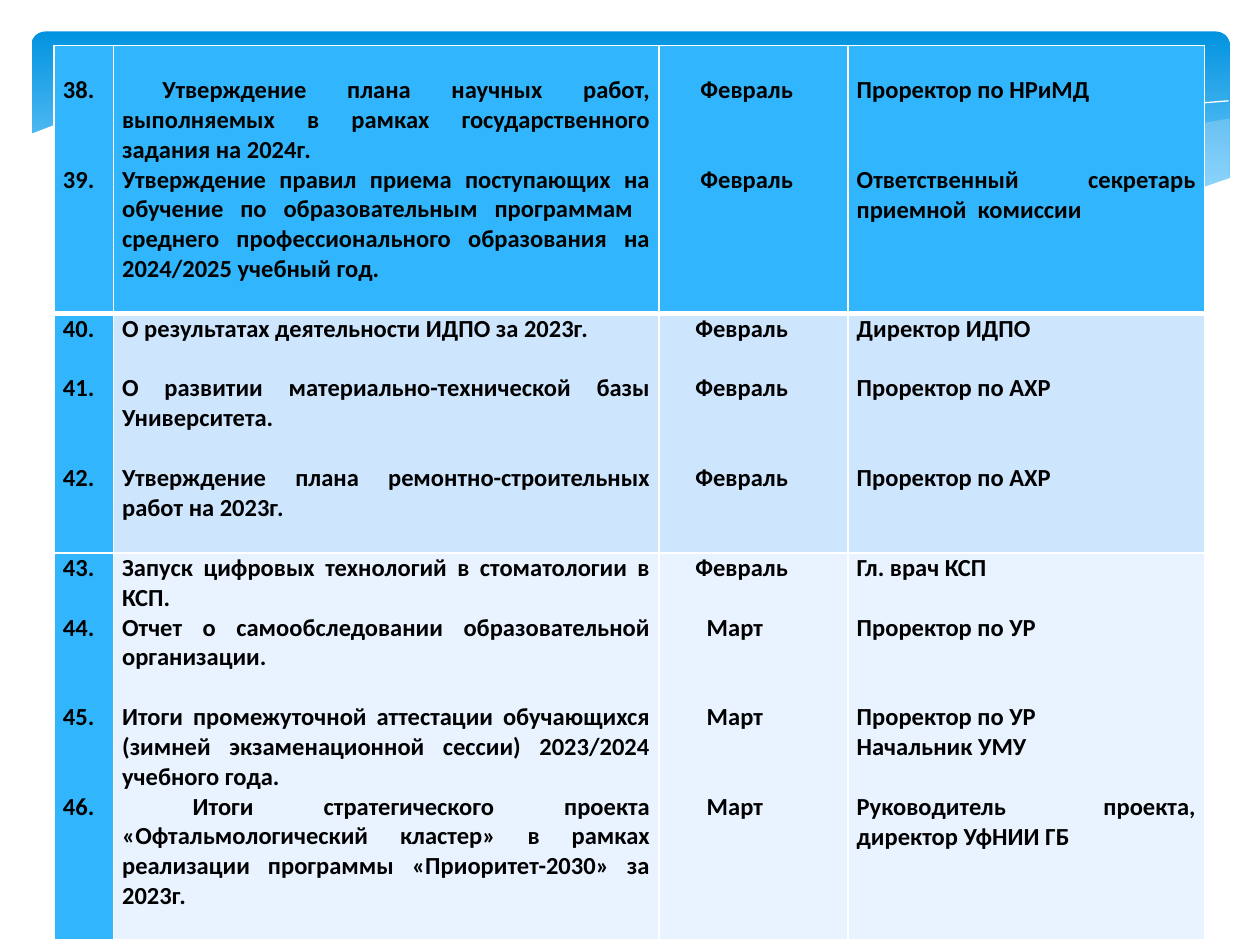
import pptx
import pptx.dml.color
import pptx.enum.shapes
import pptx.enum.text
import pptx.oxml
import pptx.oxml.ns
import pptx.util

THEME = {
    "white": "FFFFFF", "black": "000000",
    "band_top": "0293E0", "band_bottom": "83D3FE", "wave": "C6E7FC",
    "strong": "31B6FD", "tint": "CEE5FE", "pale": "E8F3FF",
    "font": "Calibri", "size": 14, "line": 17.1,
}
JUSTIFY = pptx.enum.text.PP_ALIGN.JUSTIFY
LEFT = pptx.enum.text.PP_ALIGN.LEFT
COLOR = pptx.dml.color.RGBColor.from_string
Inches = pptx.util.Inches
Pt = pptx.util.Pt


def add_wave(page, points, fill=None, opacity=100, closed=True):
    """Draw an outline whose points are hundredths of an inch."""
    builder = page.shapes.build_freeform(*points[0], scale=Inches(0.01))
    builder.add_line_segments(points[1:], close=closed)
    wave = builder.convert_to_shape()
    wave.shadow.inherit = False
    if fill is None:
        wave.fill.background()
        wave.line.color.rgb = COLOR(THEME["white"])
        wave.line.width = Pt(0)
        return
    wave.line.fill.background()
    wave.fill.solid()
    wave.fill.fore_color.rgb = COLOR(fill)
    if opacity < 100:
        color = wave.fill._xPr.find(".//" + pptx.oxml.ns.qn("a:srgbClr"))
        color.append(pptx.oxml.parse_xml(
            f'<a:alpha {pptx.oxml.ns.nsdecls("a")} val="{opacity * 1000}"/>'))


def write_cell(cell, entries, fill, align, borders):
    """Fill a cell; an entry is (blank lines before, text, first-line indent)."""
    frame = cell.text_frame
    for number, (gap, text, indent) in enumerate(entries):
        para = frame.paragraphs[0] if number == 0 else frame.add_paragraph()
        para.alignment = align
        if gap:
            para.space_before = Pt(gap * THEME["line"])
        if indent:
            properties = para._p.get_or_add_pPr()
            properties.set("marL", "0")
            properties.set("indent", str(Inches(indent)))
        span = para.add_run()
        span.text = text
        font_format = {"name": THEME["font"], "size": Pt(THEME["size"]), "bold": True}
        for name, value in font_format.items():
            setattr(span.font, name, value)
        span.font.color.rgb = COLOR(THEME["black"])
    # Borders come before the fill in the cell's properties
    for side, width in borders.items():
        cell._tc.get_or_add_tcPr().append(pptx.oxml.parse_xml(
            f'<a:{side} {pptx.oxml.ns.nsdecls("a")} w="{Pt(width)}"><a:solidFill>'
            f'<a:srgbClr val="{THEME["white"]}"/></a:solidFill></a:{side}>'))
    cell.fill.solid()
    cell.fill.fore_color.rgb = COLOR(fill)


deck = pptx.Presentation()
deck.slide_width, deck.slide_height = Inches(10), Inches(7.5)
page = deck.slides.add_slide(deck.slide_layouts[6])

# Gradient band at the top
band = page.shapes.add_shape(pptx.enum.shapes.MSO_SHAPE.ROUNDED_RECTANGLE,
                             Inches(0.25), Inches(0.25), Inches(9.51), Inches(1.56))
band.adjustments[0] = 0.07
band.shadow.inherit = False
band.line.fill.background()
band.fill.gradient()
band.fill.gradient_angle = 270
for stop, name, position in zip(band.fill.gradient_stops, ("band_top", "band_bottom"), (0, 0.9)):
    stop.color.rgb = COLOR(THEME[name])
    stop.position = position

# Waves across the band
add_wave(page, [(976, 94), (935, 101), (891, 110), (832, 125), (779, 137), (729, 147),
                (661, 160), (705, 165), (757, 170), (803, 172), (844, 171), (889, 166),
                (928, 158), (963, 147), (976, 141)], THEME["wave"], 29)
add_wave(page, [(893, 167), (837, 159), (775, 149), (706, 134), (629, 116), (569, 102),
                (514, 92), (465, 86), (399, 80), (344, 80), (286, 86), (342, 94),
                (404, 106), (491, 126), (566, 143), (634, 156), (695, 165), (748, 170),
                (807, 173), (857, 171)], THEME["wave"], 40)
add_wave(page, [(309, 90), (344, 84), (401, 82), (450, 82), (510, 86), (582, 94),
                (665, 108), (760, 128), (831, 145), (907, 166)], closed=False)
add_wave(page, [(613, 151), (672, 135), (748, 117), (806, 104), (866, 93), (910, 86),
                (951, 82), (975, 80)], closed=False)
add_wave(page, [(977, 141), (940, 154), (899, 164), (850, 170), (793, 171), (726, 167),
                (648, 156), (555, 139), (447, 114), (365, 96), (292, 85), (230, 79),
                (177, 78), (132, 81), (85, 87), (52, 96), (36, 102), (23, 107),
                (23, 224), (977, 224)], THEME["white"])

# Plan of questions: number, question, month, person in charge
rows = [
    [[(0, "38.", 0), (2, "39.", 0)],
     [(0, "Утверждение плана научных работ, выполняемых в рамках государственного "
          "задания на 2024г.", 0.32),
      (0, "Утверждение правил приема поступающих на обучение по образовательным "
          "программам  среднего профессионального образования на 2024/2025 учебный год.", 0)],
     [(0, "Февраль", 0.26), (2, "Февраль", 0.26)],
     [(0, "Проректор по НРиМД", 0),
      (2, "Ответственный секретарь приемной  комиссии", 0)]],
    [[(0, "40.", 0), (1, "41.", 0), (2, "42.", 0)],
     [(0, "О результатах деятельности ИДПО за 2023г.", 0),
      (1, "О развитии материально-технической базы Университета.", 0),
      (1, "Утверждение плана ремонтно-строительных работ на 2023г.", 0)],
     [(0, "Февраль", 0.22), (1, "Февраль", 0.22), (2, "Февраль", 0.22)],
     [(0, "Директор ИДПО", 0), (1, "Проректор по АХР", 0), (2, "Проректор по АХР", 0)]],
    [[(0, "43.", 0), (1, "44.", 0), (2, "45.", 0), (2, "46.", 0)],
     [(0, "Запуск цифровых технологий в стоматологии в КСП.", 0),
      (0, "Отчет о самообследовании образовательной организации.", 0),
      (1, "Итоги промежуточной аттестации обучающихся (зимней экзаменационной сессии) "
          "2023/2024 учебного года.", 0),
      (0, "Итоги стратегического проекта «Офтальмологический кластер» в рамках "
          "реализации программы «Приоритет-2030» за 2023г.", 0.56)],
     [(0, "Февраль", 0.22), (1, "Март", 0.31), (2, "Март", 0.31), (2, "Март", 0.31)],
     [(0, "Гл. врач КСП", 0), (1, "Проректор по УР", 0), (2, "Проректор по УР", 0),
      (0, "Начальник УМУ", 0), (1, "Руководитель проекта, директор УфНИИ ГБ", 0)]],
]
column_widths = [0.47, 4.33, 1.5, 2.83]
row_heights = [2.13, 1.9, 3.07]
row_fills = [THEME["strong"], THEME["tint"], THEME["pale"]]
column_aligns = [LEFT, JUSTIFY, LEFT, JUSTIFY]

table = page.shapes.add_table(len(rows), len(column_widths), Inches(0.43), Inches(0.36),
                              Inches(sum(column_widths)), Inches(sum(row_heights))).table
for column, width in zip(table.columns, column_widths):
    column.width = Inches(width)
for row, height in zip(table.rows, row_heights):
    row.height = Inches(height)

for row_index, row in enumerate(rows):
    # A thick rule parts the first row from the rest
    borders = {"lnL": 1, "lnR": 1, "lnT": 3 if row_index == 1 else 1,
               "lnB": 3 if row_index == 0 else 1}
    cell_format = {"margin_left": Inches(0.07), "margin_right": Inches(0.07),
                   "margin_top": Pt(THEME["line"]) if row_index == 0 else 0,
                   "margin_bottom": 0}
    for column_index, entries in enumerate(row):
        cell = table.cell(row_index, column_index)
        for name, value in cell_format.items():
            setattr(cell, name, value)
        fill = THEME["strong"] if column_index == 0 else row_fills[row_index]
        write_cell(cell, entries, fill, column_aligns[column_index], borders)

deck.save("out.pptx")
